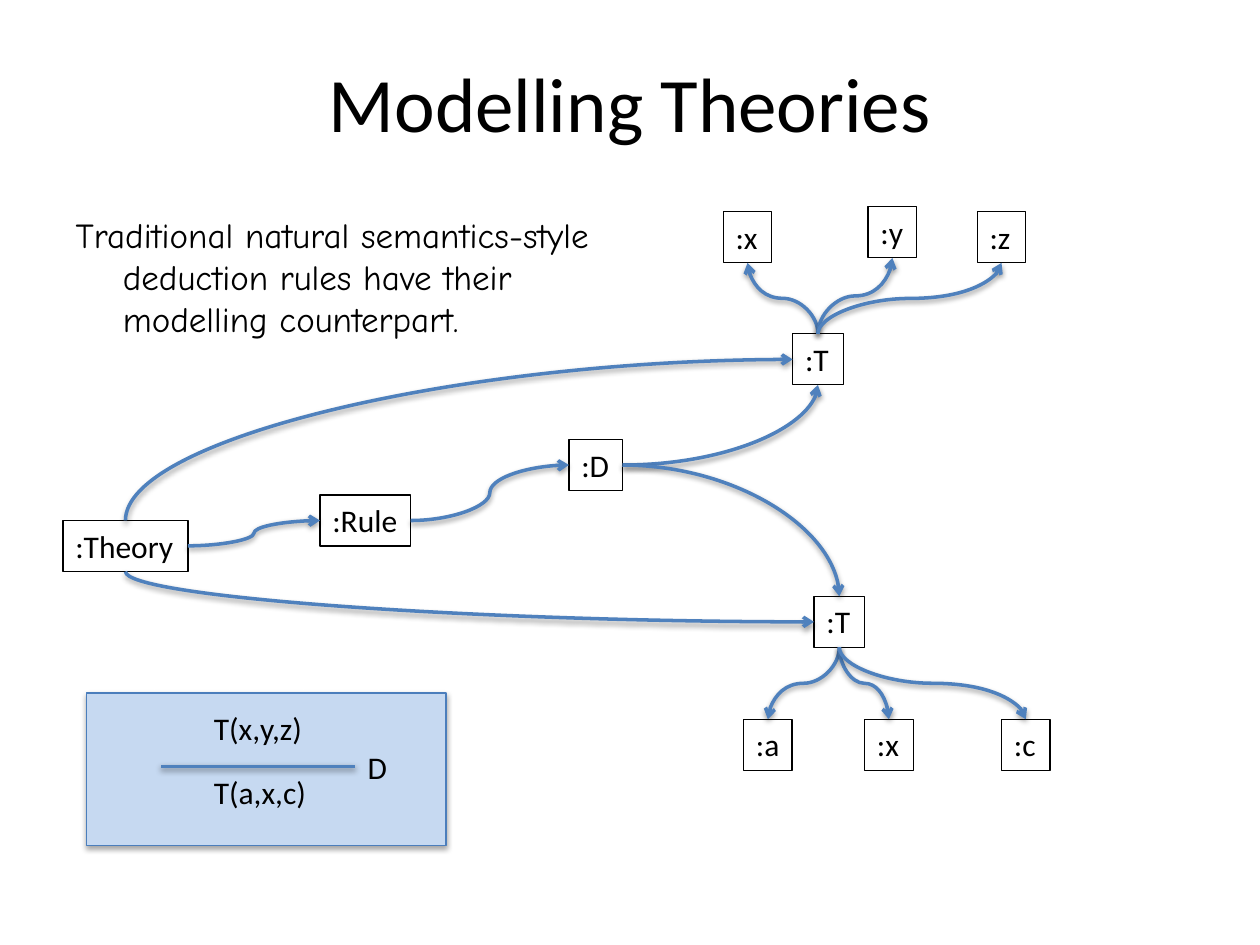
from lxml import etree
from pptx import Presentation
from pptx.dml.color import RGBColor
from pptx.enum.shapes import MSO_CONNECTOR, MSO_SHAPE
from pptx.enum.text import MSO_AUTO_SIZE, PP_ALIGN
from pptx.oxml.ns import qn
from pptx.util import Cm, Pt

CURVE, STRAIGHT = MSO_CONNECTOR.CURVE, MSO_CONNECTOR.STRAIGHT
RECTANGLE = MSO_SHAPE.RECTANGLE
FIT_SHAPE = MSO_AUTO_SIZE.SHAPE_TO_FIT_TEXT
CENTER = PP_ALIGN.CENTER

BLACK = RGBColor(0x00, 0x00, 0x00)
ARROW_BLUE = RGBColor(0x4F, 0x81, 0xBD)
PANEL_FILL = RGBColor(0xC6, 0xD9, 0xF1)
PANEL_LINE = RGBColor(0x4B, 0x7E, 0xBC)

TOP, LEFT, BOTTOM, RIGHT = range(4)
TEXT_H = 1.03
LEAF_W = 0.98

# name: (label, x, y, width), in cm from the corner of the graph
NODES = {
    "x": (":x", 13.31, 0.1, LEAF_W),
    "y": (":y", 16.23, 0, LEAF_W),
    "z": (":z", 18.43, 0.1, LEAF_W),
    "premise": (":T", 14.71, 2.56, 1.02),
    "D": (":D", 10.2, 4.69, 1.08),
    "rule": (":Rule", 5.18, 5.81, 1.83),
    "theory": (":Theory", 0, 6.32, 2.52),
    "conclusion": (":T", 15.14, 7.85, 1.02),
    "a": (":a", 13.72, 10.33, LEAF_W),
    "x2": (":x", 16.16, 10.33, LEAF_W),
    "c": (":c", 18.92, 10.33, LEAF_W),
}
EDGES = [
    ("premise", TOP, "x", BOTTOM),
    ("premise", TOP, "y", BOTTOM),
    ("premise", TOP, "z", BOTTOM),
    ("theory", TOP, "premise", LEFT),
    ("theory", BOTTOM, "conclusion", LEFT),
    ("theory", RIGHT, "rule", LEFT),
    ("rule", RIGHT, "D", LEFT),
    ("D", RIGHT, "premise", BOTTOM),
    ("D", RIGHT, "conclusion", TOP),
    ("conclusion", BOTTOM, "a", TOP),
    ("conclusion", BOTTOM, "x2", TOP),
    ("conclusion", BOTTOM, "c", TOP),
]


def format_text(tf, size, font):
    for p in tf.paragraphs:
        for r in p.runs:
            r.font.size = Pt(size)
            r.font.name = font
            r.font.color.rgb = BLACK


def place(sp, left, top, width, height):
    sp.left, sp.top, sp.width, sp.height = left, top, width, height


def add_label(shapes, text, x, y, width):
    sp = shapes.add_textbox(Cm(x), Cm(y), Cm(width), Cm(TEXT_H))
    tf = sp.text_frame
    tf.text = text
    tf.word_wrap = False
    tf.auto_size = FIT_SHAPE
    format_text(tf, 18, "Calibri")
    return sp


def add_curve(shapes, source, start, target, end):
    """Join two nodes with a curved arrow that leaves square to its side."""
    c = shapes.add_connector(CURVE, 0, 0, 0, 0)
    c.begin_connect(source, start)
    c.end_connect(target, end)
    c.line.color.rgb = ARROW_BLUE
    c.line.width = Pt(2)
    etree.SubElement(c.line._get_or_add_ln(), qn("a:tailEnd"), type="arrow")
    if start % 2 != end % 2:
        c.element.spPr.find(qn("a:prstGeom")).set("prst", "curvedConnector2")
    if start in (TOP, BOTTOM):
        # A quarter turn swaps the sides of the box around the same centre
        dx, dy = c.end_x - c.begin_x, c.end_y - c.begin_y
        mid_x, mid_y = (c.begin_x + c.end_x) // 2, (c.begin_y + c.end_y) // 2
        width, height = abs(dy), abs(dx)
        place(c, mid_x - width // 2, mid_y - height // 2, width, height)
        c.rotation = 90 if start == BOTTOM else 270
        xfrm = c.element.spPr.find(qn("a:xfrm"))
        xfrm.set("flipH", "0")
        xfrm.set("flipV", "1" if (dx > 0) == (start == BOTTOM) else "0")


def add_heading(slide, left, top, width, height):
    title = slide.shapes.title
    place(title, Cm(left), Cm(top), Cm(width), Cm(height))
    title.text_frame.text = "Modelling Theories"
    title.text_frame.paragraphs[0].alignment = CENTER
    format_text(title.text_frame, 44, "Calibri")


def add_statement(slide, left, top, width, height):
    body = slide.placeholders[1]
    place(body, Cm(left), Cm(top), Cm(width), Cm(height))
    tf = body.text_frame
    tf.text = ("Traditional natural semantics-style deduction rules "
               "have their modelling counterpart.")
    etree.SubElement(tf.paragraphs[0]._p.get_or_add_pPr(), qn("a:buNone"))
    format_text(tf, 20, "Comic Neue")


def add_graph(slide, left, top):
    nodes = {}
    for name, (label, x, y, width) in NODES.items():
        sp = add_label(slide.shapes, label, left + x, top + y, width)
        sp.line.color.rgb = BLACK
        sp.line.width = Pt(0.75)
        nodes[name] = sp
    for source, start, target, end in EDGES:
        add_curve(slide.shapes, nodes[source], start, nodes[target], end)


def add_rule_panel(slide, left, top, width, height):
    """Draw the deduction rule: premise over conclusion, named at the bar."""
    panel = slide.shapes.add_shape(RECTANGLE, Cm(left), Cm(top),
                                   Cm(width), Cm(height))
    panel.fill.solid()
    panel.fill.fore_color.rgb = PANEL_FILL
    panel.line.color.rgb = PANEL_LINE
    panel.line.width = Pt(0.75)

    shapes = slide.shapes.add_group_shape().shapes
    text_x, bar_y = left + 2.31, top + 1.48
    bar_start, bar_end = left + 1.5, left + 5.41
    add_label(shapes, "T(x,y,z)", text_x, top + 0.2, 2.31)
    add_label(shapes, "T(a,x,c)", text_x, bar_y, 2.39)
    bar = shapes.add_connector(STRAIGHT, Cm(bar_start), Cm(bar_y),
                               Cm(bar_end), Cm(bar_y))
    bar.line.color.rgb = ARROW_BLUE
    bar.line.width = Pt(2)
    add_label(shapes, "D", bar_end, bar_y - 0.49, 0.91)


def main():
    prs = Presentation()
    prs.slide_width, prs.slide_height = Cm(25.4), Cm(19.05)
    slide = prs.slides.add_slide(prs.slide_layouts[1])
    add_heading(slide, 1.27, 0.76, 22.86, 2.57)
    add_statement(slide, 1.27, 4.17, 11.89, 3.02)
    add_graph(slide, 1.27, 4.17)
    add_rule_panel(slide, 1.75, 13.97, 7.24, 3.07)
    prs.save("out.pptx")


if __name__ == "__main__":
    main()
